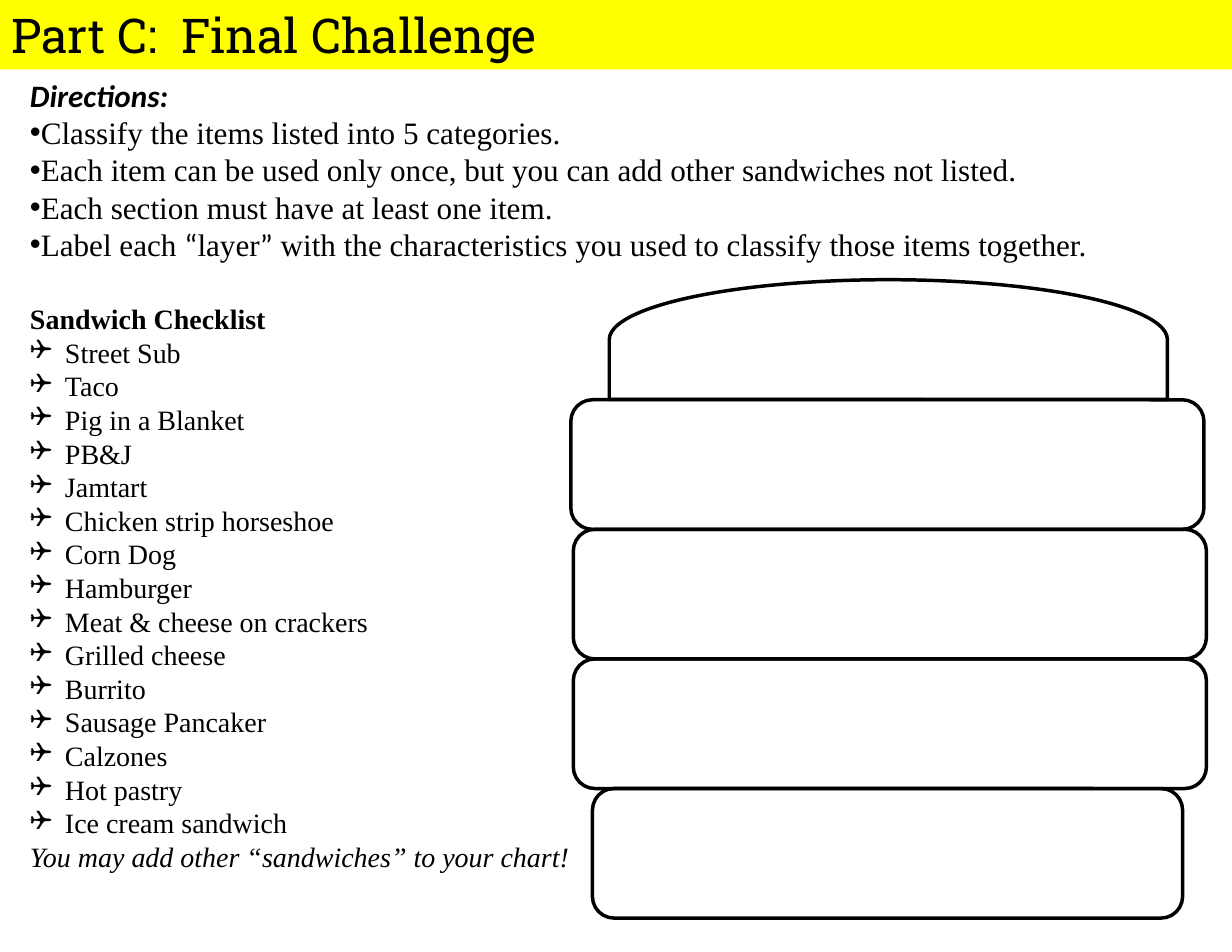
import pptx
import pptx.util
import pptx.dml.color
import pptx.enum.shapes
import pptx.enum.text
import lxml.etree

Pt = pptx.util.Pt
SHAPE = pptx.enum.shapes.MSO_SHAPE
ANCHOR = pptx.enum.text.MSO_ANCHOR
ALIGN = pptx.enum.text.PP_ALIGN
BLACK = pptx.dml.color.RGBColor(0, 0, 0)
YELLOW = pptx.dml.color.RGBColor(255, 255, 0)
SERIF, SANS, SLAB = "Times New Roman", "Calibri", "Roboto Slab"

DIRECTIONS = [
    "Classify the items listed into 5 categories.",
    "Each item can be used only once, but you can add other sandwiches not listed.",
    "Each section must have at least one item.",
]
SANDWICHES = [
    "Street Sub", "Taco", "Pig in a Blanket", "PB&J", "Jamtart",
    "Chicken strip horseshoe", "Corn Dog", "Hamburger",
    "Meat & cheese on crackers", "Grilled cheese", "Burrito",
    "Sausage Pancaker", "Calzones", "Hot pastry", "Ice cream sandwich",
]


class Deck:
    def __init__(self, width, height):
        self.prs = pptx.Presentation()
        self.prs.slide_width, self.prs.slide_height = Pt(width), Pt(height)
        self.s = self.prs.slides.add_slide(self.prs.slide_layouts[5])

    def style(self, font, name, size, bold=False, italic=False):
        font.name, font.size = name, Pt(size)
        font.bold, font.italic = bold, italic
        font.color.rgb = BLACK

    def title(self, text, width, height, size):
        sp = self.s.shapes.title
        sp.left, sp.top, sp.width, sp.height = 0, 0, Pt(width), Pt(height)
        sp.fill.solid()
        sp.fill.fore_color.rgb = YELLOW
        tf = sp.text_frame
        tf.auto_size = pptx.enum.text.MSO_AUTO_SIZE.NONE
        tf.vertical_anchor = ANCHOR.TOP
        tf.text = text
        p = tf.paragraphs[0]
        p.alignment = ALIGN.LEFT
        self.style(p.font, SLAB, size)

    def text_box(self, left, top, width, height, anchor=ANCHOR.TOP):
        sp = self.s.shapes.add_textbox(Pt(left), Pt(top), Pt(width), Pt(height))
        tf = sp.text_frame
        tf.word_wrap = True
        tf.vertical_anchor = anchor
        return tf

    def paragraph(self, tf, text, name, size, bold=False, italic=False):
        p = tf.paragraphs[0]
        if p.runs:
            p = tf.add_paragraph()
        p.alignment = ALIGN.LEFT
        self.style(p.font, name, size, bold, italic)
        p.add_run().text = text
        return p

    def bullet(self, p, char, typeface, indent=0):
        pPr = p._p.get_or_add_pPr()
        pPr.set("marL", str(Pt(indent)))
        pPr.set("indent", str(-Pt(indent)))
        ns = pptx.oxml.ns.qn
        font = lxml.etree.Element(ns("a:buFont"), typeface=typeface)
        pPr.insert(0, font)
        font.addnext(lxml.etree.Element(ns("a:buChar"), char=char))

    def outline(self, kind, left, top, width, height, rotation=0):
        sp = self.s.shapes.add_shape(kind, Pt(left), Pt(top), Pt(width), Pt(height))
        sp.rotation = rotation
        sp.shadow.inherit = False
        sp.fill.background()
        sp.line.color.rgb = BLACK
        sp.line.width = Pt(2.25)


def main():
    deck = Deck(792, 612)
    deck.title("Part C:  Final Challenge", 792, 44.6, 30.8)

    tf = deck.text_box(12.2, 45.4, 759, 152.6)
    deck.paragraph(tf, "Directions:", SANS, 20, bold=True, italic=True)
    for text in DIRECTIONS:
        deck.bullet(deck.paragraph(tf, text, SERIF, 20), "•", "Arial")
    p = deck.paragraph(tf, "Label each ", SERIF, 20)
    deck.bullet(p, "•", "Arial")
    for text, name in [
        ("“", SANS), ("layer", SERIF), ("”", SANS),
        (" with the characteristics you used to classify those items together.", SERIF),
    ]:
        r = p.add_run()
        r.text, r.font.name = text, name

    deck.outline(SHAPE.FLOWCHART_DELAY, 532.6, 38.9, 77, 358.8, rotation=270)
    layer_height = 83.3
    layers = [(367, 407), (368.6, 407), (368.6, 407), (380.9, 379.4)]
    for i, (left, width) in enumerate(layers):
        deck.outline(SHAPE.ROUNDED_RECTANGLE, left, 257 + i * layer_height, width, layer_height)

    tf = deck.text_box(12.2, 188.6, 372, 378, ANCHOR.MIDDLE)
    deck.paragraph(tf, "Sandwich Checklist", SERIF, 18, bold=True)
    for text in SANDWICHES:
        deck.bullet(deck.paragraph(tf, text, SERIF, 18), "❑", "Wingdings", 22.5)
    deck.paragraph(tf, "You may add other “sandwiches” to your chart!", SERIF, 18, italic=True)

    deck.prs.save("out.pptx")


if __name__ == "__main__":
    main()
